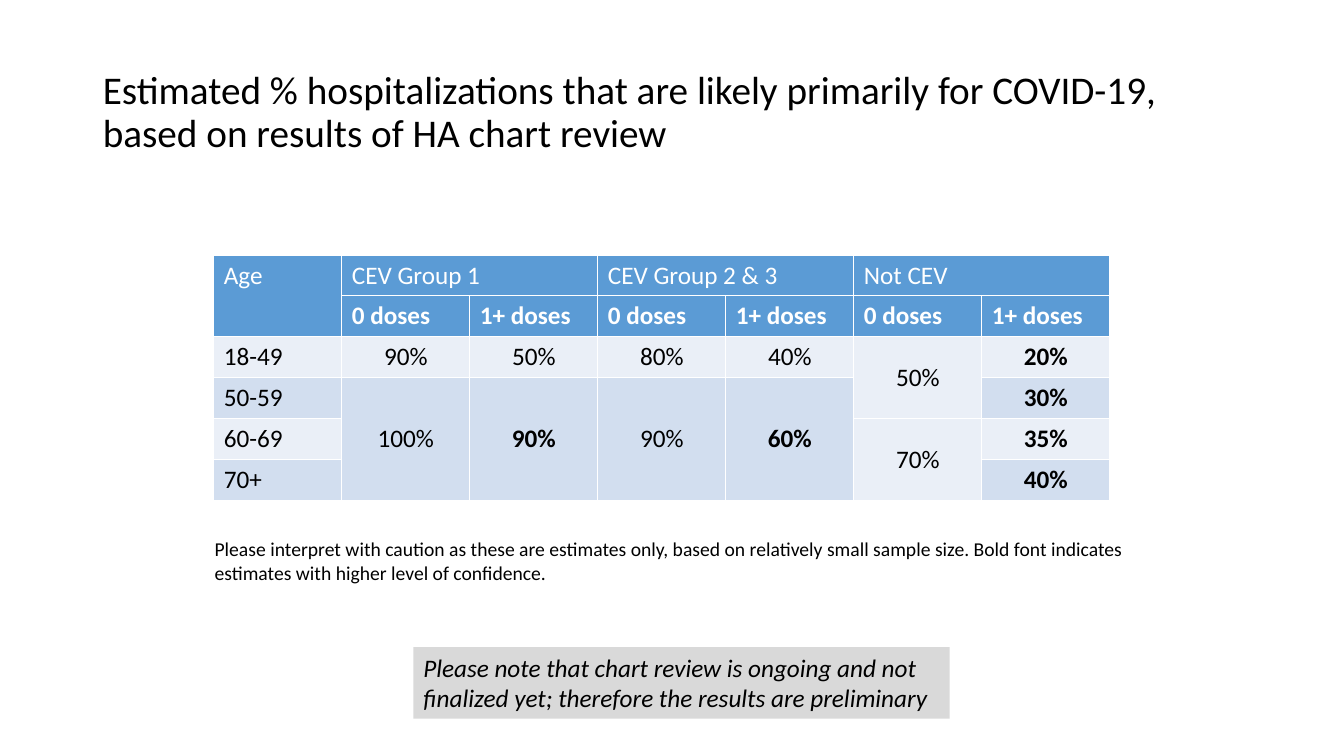
from pptx import Presentation
from pptx.dml.color import RGBColor
from pptx.enum.shapes import MSO_SHAPE
from pptx.enum.text import MSO_ANCHOR, MSO_AUTO_SIZE, PP_ALIGN
from pptx.util import Inches, Pt

COLORS = {"text": "000000", "white": "FFFFFF", "header": "5B9BD5",
          "light": "EAEFF7", "band": "D2DEEF", "note": "D9D9D9"}


def rgb(name):
    return RGBColor.from_string(COLORS[name])


def write(tf, text, size, color="text", align=PP_ALIGN.LEFT, **font):
    """Fill a text frame with one formatted run and return its paragraph."""
    p = tf.paragraphs[0]
    p.alignment = align
    r = p.add_run()
    r.text = text
    r.font.color.rgb = rgb(color)
    for name, value in {"name": "Calibri", "size": Pt(size), **font}.items():
        setattr(r.font, name, value)
    return p


prs = Presentation()
prs.slide_width, prs.slide_height = Inches(13.33), Inches(7.5)
s = prs.slides.add_slide(prs.slide_layouts[5])

# Title
title = s.shapes.title
title.left, title.top = Inches(0.92), Inches(0.4)
title.width, title.height = Inches(11.5), Inches(1.45)
tf = title.text_frame
tf.word_wrap = True
tf.auto_size = MSO_AUTO_SIZE.NONE
tf.vertical_anchor = MSO_ANCHOR.MIDDLE
p = write(tf, "Estimated % hospitalizations that are likely primarily for COVID-19, "
          "based on results of HA chart review", 28)
p.line_spacing = 0.9

# Estimates table: None marks a cell covered by a merge, * marks bold
rows = [
    ["Age", "CEV Group 1", None, "CEV Group 2 & 3", None, "Not CEV", None],
    [None] + ["*0 doses", "*1+ doses"] * 3,
    ["18-49", "90%", "50%", "80%", "40%", "50%", "*20%"],
    ["50-59", "100%", "*90%", "90%", "*60%", None, "*30%"],
    ["60-69", None, None, None, None, "70%", "*35%"],
    ["70+", None, None, None, None, None, "*40%"],
]
merges = [((0, 0), (1, 0)), ((2, 5), (3, 5)), ((4, 5), (5, 5))]
merges += [((0, col), (0, col + 1)) for col in (1, 3, 5)]
merges += [((3, col), (5, col)) for col in range(1, 5)]

table = s.shapes.add_table(len(rows), len(rows[0]), Inches(2.12), Inches(2.53),
                           Inches(8.89), Inches(2.43)).table
for start, end in merges:
    table.cell(*start).merge(table.cell(*end))

for i, row in enumerate(rows):
    header = i < 2
    fill = "header" if header else ("light", "band")[i % 2]
    for j, value in enumerate(row):
        cell = table.cell(i, j)
        cell.fill.solid()
        cell.fill.fore_color.rgb = rgb(fill)
        if value is None:
            continue
        centered = not header and j > 0
        cell.vertical_anchor = MSO_ANCHOR.MIDDLE if centered else MSO_ANCHOR.TOP
        write(cell.text_frame, value.lstrip("*"), 18,
              "white" if header else "text",
              PP_ALIGN.CENTER if centered else PP_ALIGN.LEFT,
              bold=value.startswith("*"))

# Caution under the table
caution = s.shapes.add_textbox(Inches(2.03), Inches(5.28), Inches(9.25), Inches(0.57))
caution.text_frame.word_wrap = True
write(caution.text_frame, "Please interpret with caution as these are estimates only, "
      "based on relatively small sample size. Bold font indicates estimates with "
      "higher level of confidence.", 14)

# Preliminary results note
note = s.shapes.add_shape(MSO_SHAPE.RECTANGLE, Inches(4.1), Inches(6.42),
                          Inches(5.32), Inches(0.71))
note.shadow.inherit = False
note.fill.solid()
note.fill.fore_color.rgb = rgb("note")
note.line.fill.background()
note.text_frame.word_wrap = True
note.text_frame.vertical_anchor = MSO_ANCHOR.TOP
write(note.text_frame, "Please note that chart review is ongoing and not finalized yet; "
      "therefore the results are preliminary", 18, italic=True)

prs.save("out.pptx")
